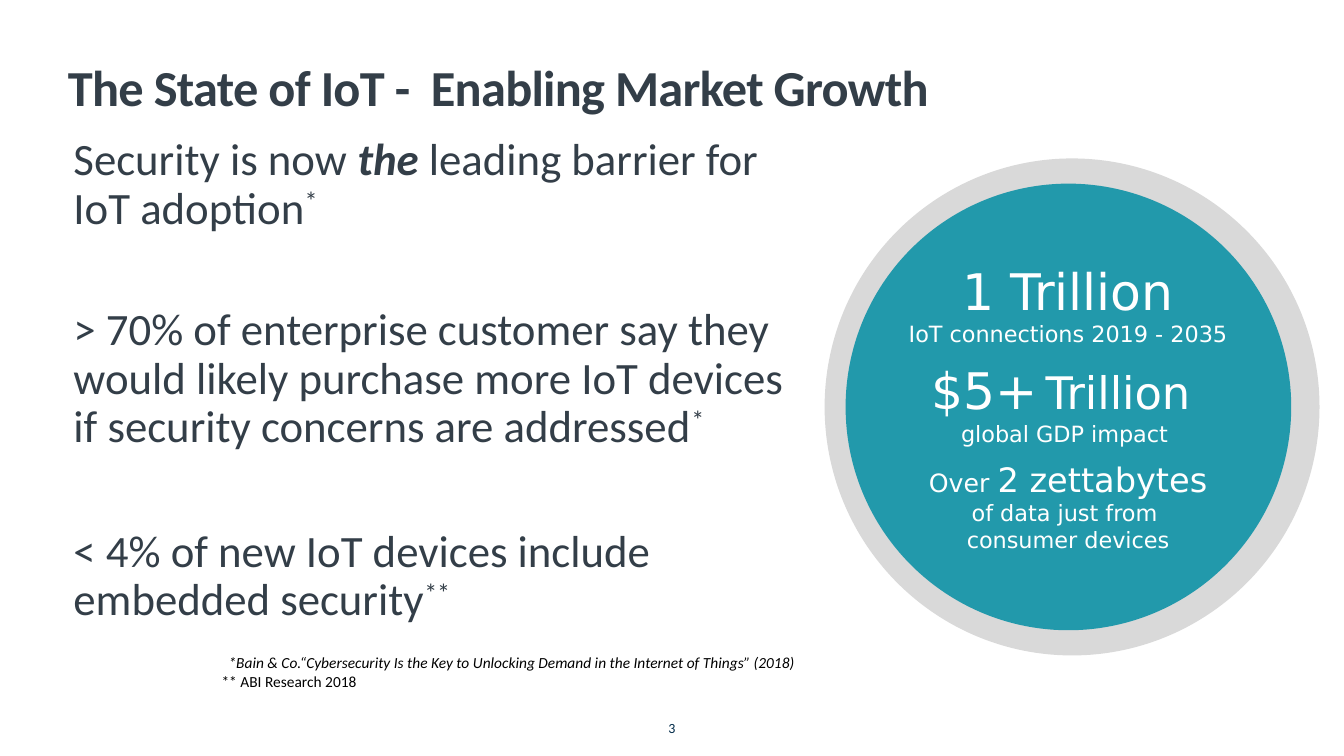
from lxml.etree import SubElement
from pptx import Presentation
from pptx.dml.color import RGBColor
from pptx.enum.shapes import MSO_SHAPE as Shape
from pptx.enum.text import MSO_ANCHOR as Anchor, MSO_AUTO_SIZE as AutoSize, PP_ALIGN as Align
from pptx.oxml.ns import qn
from pptx.util import Pt

SLATE = "333E48"
NAVY = "002B49"
TEAL = "008DA3"
GREY = "D9D9D9"
WHITE = "FFFFFF"
BLACK = "000000"


def color(value):
    return RGBColor.from_string(value)


def add_run(paragraph, text, size, fill, font="Calibri", bold=False, italic=False,
            raised=False, tracking=0):
    run = paragraph.add_run()
    run.text = text
    run.font.name = font
    run.font.size = Pt(size)
    run.font.bold = bold
    run.font.italic = italic
    run.font.color.rgb = color(fill)
    properties = run._r.get_or_add_rPr()
    if raised:
        properties.set("baseline", "30000")
    if tracking:
        properties.set("spc", str(round(tracking * 100)))


def set_frame(shape, margin=(0, 0), anchor=Anchor.TOP, wrap=True):
    frame = shape.text_frame
    frame.auto_size = AutoSize.NONE
    frame.word_wrap = wrap
    frame.vertical_anchor = anchor
    frame.margin_left = frame.margin_right = Pt(margin[0])
    frame.margin_top = frame.margin_bottom = Pt(margin[1])
    return frame


def add_text_box(slide, box, **frame_format):
    return set_frame(slide.shapes.add_textbox(*map(Pt, box)), **frame_format)


def add_paragraph(frame, index, align=Align.LEFT, line=None, before=0, indent=0):
    paragraph = frame.add_paragraph() if index else frame.paragraphs[0]
    paragraph.alignment = align
    paragraph.line_spacing = line
    paragraph.space_before = Pt(before if index else 0)
    paragraph.space_after = Pt(0)
    if indent:
        properties = paragraph._p.get_or_add_pPr()
        properties.set("marL", str(Pt(indent)))
        properties.set("indent", "0")
    return paragraph


def add_title(slide, box):
    title = slide.shapes.title
    title.left, title.top, title.width, title.height = map(Pt, box)
    frame = set_frame(title, anchor=Anchor.BOTTOM)
    paragraph = add_paragraph(frame, 0, line=0.85)
    add_run(paragraph, "The State of IoT -  Enabling Market Growth", 36, SLATE,
            bold=True, tracking=-0.5)


def add_findings(slide, box):
    emphasis = {"bold": True, "italic": True}
    mark = {"raised": True}
    findings = [
        (0, [("Security is now ", {}), ("the", emphasis),
             (" leading barrier for IoT adoption", {}), ("*", mark)]),
        (52.2, [("> 70% of enterprise customer say they would likely purchase more IoT "
                 "devices if security concerns are addressed", {}), ("*", mark)]),
        (54.4, [("< 4% of new IoT devices include embedded security", {}), ("**", mark)]),
    ]
    frame = add_text_box(slide, box)
    for index, (before, pieces) in enumerate(findings):
        paragraph = add_paragraph(frame, index, line=0.9, before=before, indent=6.5)
        for text, text_format in pieces:
            add_run(paragraph, text, 32, SLATE, **text_format)


def add_sources(slide, box):
    sources = [
        ("*Bain & Co.“Cybersecurity Is the Key to Unlocking Demand in the Internet of Things” (2018)",
         True, 5),
        ("** ABI Research 2018", False, 0),
    ]
    frame = add_text_box(slide, box, margin=(7.2, 3.6))
    for index, (text, italic, indent) in enumerate(sources):
        paragraph = add_paragraph(frame, index, indent=indent)
        add_run(paragraph, text, 11, BLACK, italic=italic)


def add_disc(slide, box, fill, opacity=100):
    disc = slide.shapes.add_shape(Shape.OVAL, *map(Pt, box))
    disc.shadow.inherit = False
    disc.line.fill.background()
    disc.fill.solid()
    disc.fill.fore_color.rgb = color(fill)
    if opacity < 100:
        tone = disc._element.spPr.find(qn("a:solidFill")).find(qn("a:srgbClr"))
        SubElement(tone, qn("a:alpha")).set("val", str(opacity * 1000))


def add_market_circle(slide, box):
    left, top, width, height = box
    add_disc(slide, box, GREY)
    add_disc(slide, (left + 15, top + 18, width - 35.2, height - 36), TEAL, opacity=84)
    facts = [
        (0, [("1 Trillion", 36)]),
        (0, [("IoT connections 2019 - 2035", 16)]),
        (8.5, [("$5+", 36), (" ", 18), ("Trillion ", 32)]),
        (0, [("global GDP impact ", 16)]),
        (8.5, [("Over ", 18), ("2 zettabytes", 24)]),
        (0, [("of data just from ", 16)]),
        (0, [("consumer devices", 16)]),
    ]
    frame = add_text_box(slide, (left + 46.5, top + 72.6, 255, 234), wrap=False)
    for index, (before, pieces) in enumerate(facts):
        paragraph = add_paragraph(frame, index, align=Align.CENTER, before=before)
        for text, size in pieces:
            add_run(paragraph, text, size, WHITE, font="DejaVu Sans")


def add_slide_number(slide, box):
    paragraph = add_paragraph(add_text_box(slide, box), 0, align=Align.CENTER, line=0.9)
    add_run(paragraph, "3", 10, NAVY)


def main():
    presentation = Presentation()
    presentation.slide_width = Pt(960)
    presentation.slide_height = Pt(540)
    slide = presentation.slides.add_slide(presentation.slide_layouts[5])
    add_title(slide, (48.5, 1.2, 894.2, 82))
    add_findings(slide, (46, 98, 523, 355))
    add_sources(slide, (151.2, 463, 429, 34))
    add_market_circle(slide, (589, 113.2, 353.5, 355))
    add_slide_number(slide, (467.8, 515.5, 24.5, 11))
    presentation.save("out.pptx")


if __name__ == "__main__":
    main()
